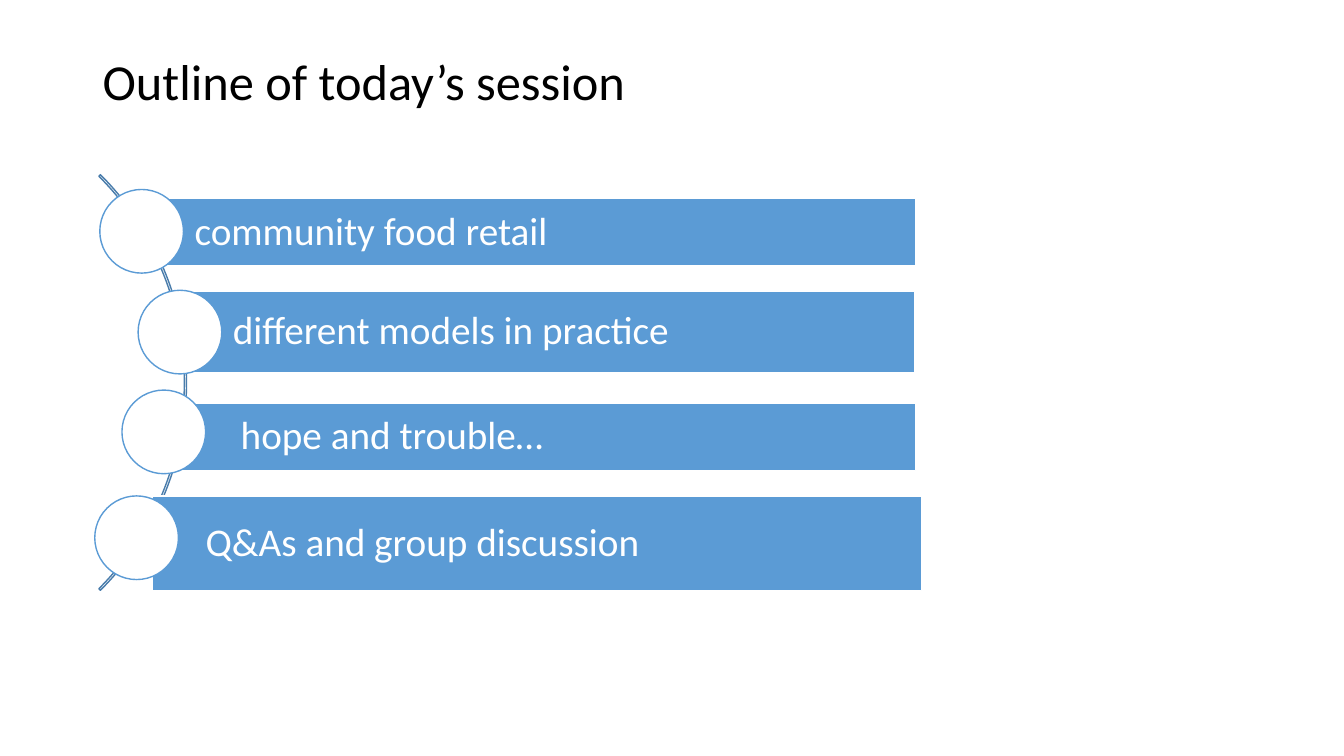
from dataclasses import dataclass

from pptx import Presentation
from pptx.dml.color import RGBColor
from pptx.enum.shapes import MSO_SHAPE
from pptx.enum.text import MSO_ANCHOR, PP_ALIGN
from pptx.shapes.autoshape import Shape
from pptx.slide import Slide
from pptx.text.text import TextFrame
from pptx.util import Pt

PX = 9144  # 100 px to the inch
ARC, RECT, OVAL = MSO_SHAPE.BLOCK_ARC, MSO_SHAPE.RECTANGLE, MSO_SHAPE.OVAL
MIDDLE, LEFT = MSO_ANCHOR.MIDDLE, PP_ALIGN.LEFT

BLACK = RGBColor(0x00, 0x00, 0x00)
WHITE = RGBColor(0xFF, 0xFF, 0xFF)
BLUE = RGBColor(0x5B, 0x9B, 0xD5)
STEEL = RGBColor(0x49, 0x7C, 0xAB)

FONT = "Calibri"
DOT = 83
INSET = 53
PAD = 8


@dataclass(frozen=True)
class Box:
    left: int
    top: int
    width: int
    height: int

    def emu(self) -> tuple[int, int, int, int]:
        return (self.left * PX, self.top * PX, self.width * PX, self.height * PX)


@dataclass(frozen=True)
class Topic:
    text: str
    bar: Box
    dot_left: int
    dot_top: int


TITLE = Box(92, 40, 1150, 87)
CURVE = Box(-398, 88, 583, 583)
TOPICS = [
    Topic("community food retail", Box(140, 197, 768, 67), 99, 188),
    Topic("different models in practice", Box(178, 289, 729, 81), 137, 288),
    Topic(" hope and trouble…", Box(177, 400, 731, 67), 121, 387),
    Topic("Q&As and group discussion", Box(151, 492, 763, 94), 94, 492),
]


def add_shape(slide: Slide, kind: MSO_SHAPE, box: Box,
              fill: RGBColor | None, line: RGBColor) -> Shape:
    shape = slide.shapes.add_shape(kind, *box.emu())
    shape.shadow.inherit = False
    if fill is None:
        shape.fill.background()
    else:
        shape.fill.solid()
        shape.fill.fore_color.rgb = fill
    shape.line.color.rgb = line
    shape.line.width = Pt(1)
    return shape


def set_text(frame: TextFrame, text: str, size: int, color: RGBColor) -> None:
    frame.word_wrap = True
    frame.vertical_anchor = MIDDLE
    frame.text = text
    para = frame.paragraphs[0]
    para.alignment = LEFT
    para.line_spacing = 0.9
    para.font.name = FONT
    para.font.size = Pt(size)
    para.font.color.rgb = color


def add_title(slide: Slide) -> None:
    title = slide.shapes.add_textbox(*TITLE.emu())
    set_text(title.text_frame, "Outline of today’s session", 36, BLACK)


def add_curve(slide: Slide) -> None:
    """Draw the thin arc from -45 to 45 degrees that links the dots."""
    curve = add_shape(slide, ARC, CURVE, None, STEEL)
    for index, value in enumerate((189, 27, 0.0037)):
        curve.adjustments[index] = value


def add_topic(slide: Slide, topic: Topic) -> None:
    bar = add_shape(slide, RECT, topic.bar, BLUE, WHITE)
    frame = bar.text_frame
    frame.margin_left = INSET * PX
    frame.margin_top = frame.margin_right = frame.margin_bottom = PAD * PX
    set_text(frame, topic.text, 28, WHITE)
    dot = Box(topic.dot_left, topic.dot_top, DOT, DOT)
    add_shape(slide, OVAL, dot, WHITE, BLUE)


def main() -> None:
    deck = Presentation()
    deck.slide_width, deck.slide_height = 1333 * PX, 750 * PX
    slide = deck.slides.add_slide(deck.slide_layouts[6])
    add_title(slide)
    add_curve(slide)
    for topic in TOPICS:
        add_topic(slide, topic)
    deck.save("out.pptx")


if __name__ == "__main__":
    main()
